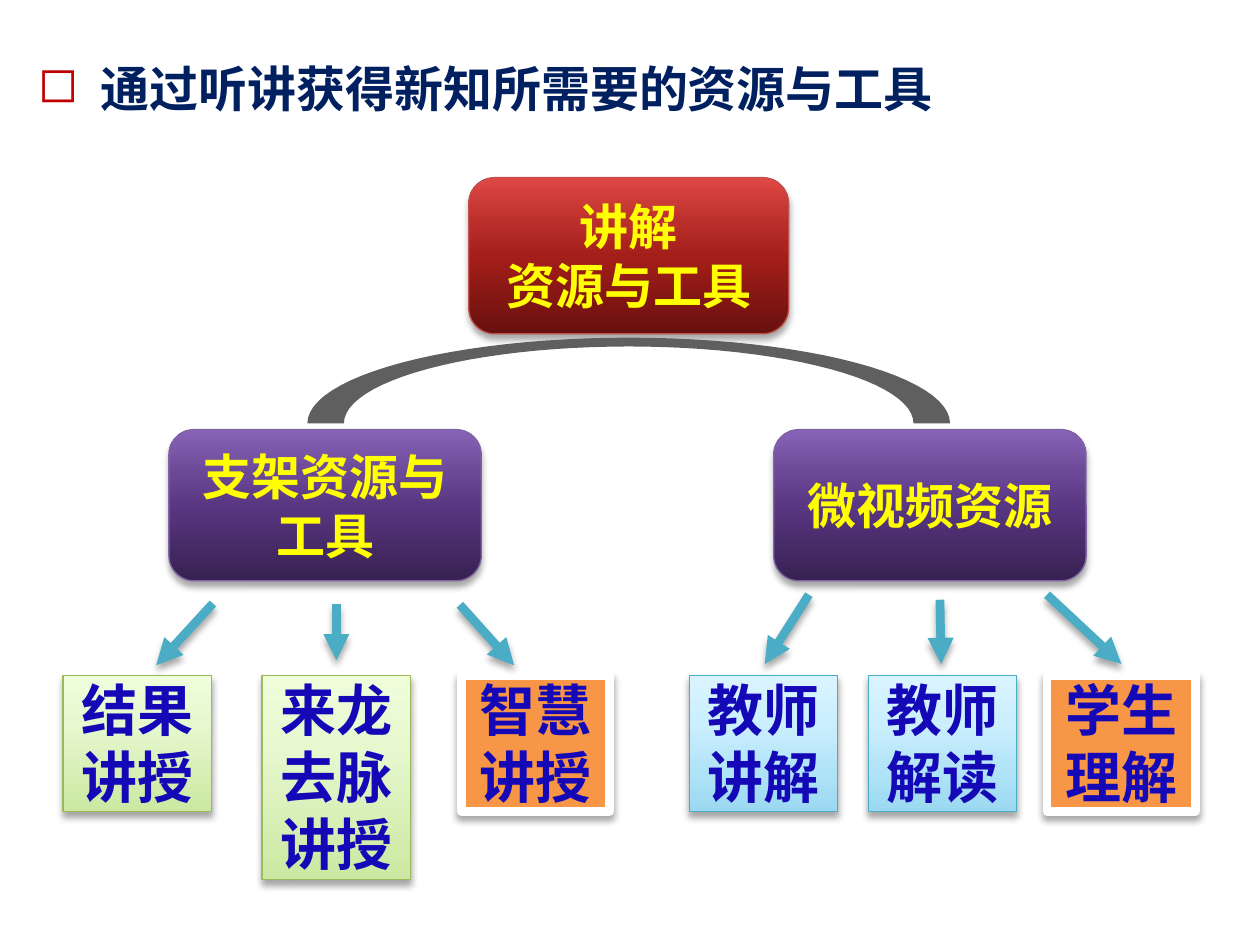
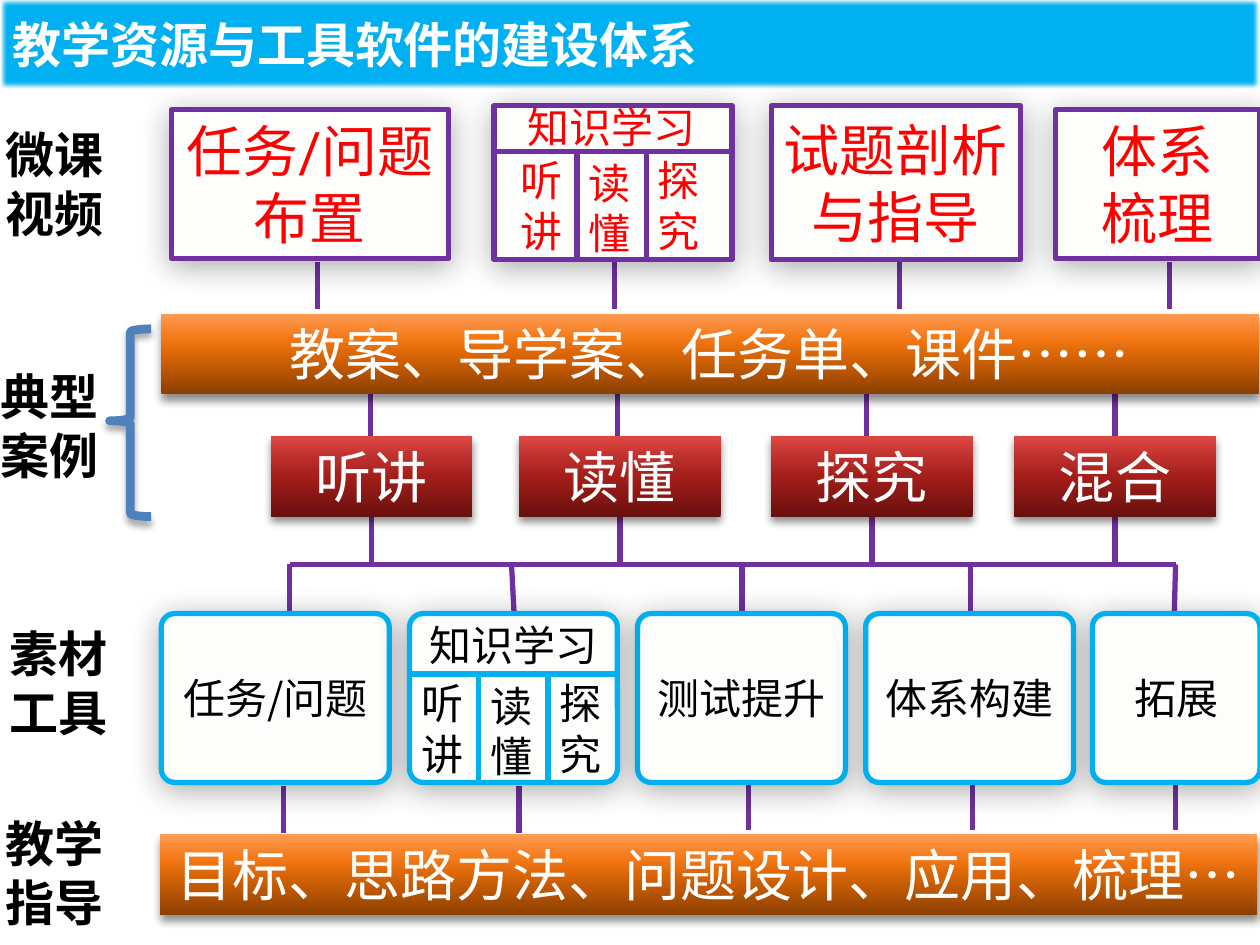
import math

import pptx
import pptx.dml.color
import pptx.enum.dml
import pptx.enum.shapes
import pptx.enum.text
import pptx.oxml
import pptx.oxml.ns
import pptx.util
from lxml import etree

COLUMNS, ROWS = 100, 75
SHAPES = pptx.enum.shapes.MSO_SHAPE
CENTER, LEFT = pptx.enum.text.PP_ALIGN.CENTER, pptx.enum.text.PP_ALIGN.LEFT
TOP, MIDDLE = pptx.enum.text.MSO_ANCHOR.TOP, pptx.enum.text.MSO_ANCHOR.MIDDLE

CJK, LATIN = "Noto Sans CJK SC", "Roboto"
WHITE, BLACK, PAPER = "FFFFFF", "000000", "FDFDFC"
PURPLE, SKY, TEAL, YELLOW, RED = "7030A0", "00B0F0", "4BACC6", "FFFF00", "FF0000"
INK, ORANGE, GREY = "1509B7", "F79646", "5F5F5F"

# Gradients run from the bottom edge up: (percent, colour)
CRIMSON = [(0, "68100E"), (50, "A41E1A"), (70, "B92E2A"), (100, "DF4845")]
VIOLET = [(0, "372152"), (50, "593782"), (70, "6A4895"), (100, "8763B7")]
AMBER = [(0, "8B3F00"), (50, "DA6606"), (70, "F47917"), (100, "FF9C54")]
ICE = [(0, "9BD9F1"), (65, "CBEFFE"), (100, "DAF4FF")]
LIME = [(0, "CCE8A2"), (65, "E7F8CF"), (100, "EFFDDB")]

# Shadows: opacity percent, blur points, distance points, direction degrees
SMALL, BAR, WIDE = (35, 4, 3, 90), (45, 5, 3, 90), (33, 17.8, 3, 87)


def rgb(value):
    return pptx.dml.color.RGBColor.from_string(value)


def add_node(parent, tag, **attributes):
    node = etree.SubElement(parent, pptx.oxml.ns.qn(tag))
    for key, value in attributes.items():
        node.set(key, str(value))
    return node


class Deck:
    """Holds the presentation, its style and the slide being built."""

    def __init__(self):
        self.presentation = pptx.Presentation()
        self.presentation.slide_width = pptx.util.Inches(10)
        self.presentation.slide_height = pptx.util.Inches(7.5)
        self.slide = None

    def x(self, columns):
        return round(self.presentation.slide_width * columns / COLUMNS)

    def y(self, rows):
        return round(self.presentation.slide_height * rows / ROWS)

    def place(self, area):
        left, top, width, height = area
        return self.x(left), self.y(top), self.x(width), self.y(height)

    def title(self, text, area, color, anchor=MIDDLE):
        """Start a title-only slide and return its formatted title."""
        layout = self.presentation.slide_layouts[5]
        self.slide = self.presentation.slides.add_slide(layout)
        heading = self.slide.shapes.title
        heading.left, heading.top, heading.width, heading.height = self.place(area)
        self.set_text(heading, text, 28, color, bold=True, align=LEFT, anchor=anchor)
        return heading

    def bullet(self, paragraph, mark, color):
        properties = paragraph._p.get_or_add_pPr()
        properties.set("marL", str(self.x(5)))
        properties.set("indent", str(-self.x(5)))
        add_node(add_node(properties, "a:buClr"), "a:srgbClr", val=color)
        add_node(properties, "a:buChar", char=mark)

    def set_text(self, holder, text, size, color, bold=False, font=CJK,
                 align=CENTER, anchor=MIDDLE, inset=None):
        frame = holder.text_frame
        frame.text = text
        frame.word_wrap = True
        frame.auto_size = pptx.enum.text.MSO_AUTO_SIZE.NONE
        frame.vertical_anchor = anchor
        if inset is not None:
            frame.margin_left = frame.margin_right = inset
            frame.margin_top = frame.margin_bottom = inset
        for paragraph in frame.paragraphs:
            paragraph.alignment = align
            for run in paragraph.runs:
                run.font.size = pptx.util.Pt(size)
                run.font.bold = bold
                run.font.name = font
                run.font.color.rgb = rgb(color)
                add_node(run._r.get_or_add_rPr(), "a:ea", typeface=CJK)

    def paint(self, shape, fill, line, shadow):
        """Set fill (hex or gradient), line (hex, points) and shadow."""
        if fill is None:
            shape.fill.background()
        elif isinstance(fill, str):
            shape.fill.solid()
            shape.fill.fore_color.rgb = rgb(fill)
        else:
            shape.fill.gradient()
            shape.fill.gradient_angle = 90
            stops = shape.element.spPr.find(".//" + pptx.oxml.ns.qn("a:gsLst"))
            for stop in list(stops):
                stops.remove(stop)
            for percent, color in fill:
                stop = add_node(stops, "a:gs", pos=percent * 1000)
                add_node(stop, "a:srgbClr", val=color)
        if line is None:
            shape.line.fill.background()
        else:
            shape.line.color.rgb = rgb(line[0])
            shape.line.width = pptx.util.Pt(line[1])
        self.cast(shape, shadow)

    def cast(self, shape, shadow):
        effects = add_node(shape.element.spPr, "a:effectLst")
        if shadow:
            opacity, blur, distance, direction = shadow
            outer = add_node(effects, "a:outerShdw", blurRad=pptx.util.Pt(blur),
                             dist=pptx.util.Pt(distance), dir=direction * 60000,
                             rotWithShape=0)
            color = add_node(outer, "a:srgbClr", val=BLACK)
            add_node(color, "a:alpha", val=opacity * 1000)
        return effects

    def box(self, area, fill, line=None, shadow=None, kind=SHAPES.RECTANGLE,
            adjust=(), text=None, **style):
        shape = self.slide.shapes.add_shape(kind, *self.place(area))
        for index, value in enumerate(adjust):
            shape.adjustments[index] = value
        self.paint(shape, fill, line, shadow)
        if text:
            self.set_text(shape, text, **style)

    def label(self, area, text, size, color, bold=False):
        holder = self.slide.shapes.add_textbox(*self.place(area))
        self.set_text(holder, text, size, color, bold, anchor=TOP)

    def line(self, x1, y1, x2, y2, color=PURPLE, width=3, arrow=False, shadow=None):
        connector = self.slide.shapes.add_connector(
            pptx.enum.shapes.MSO_CONNECTOR.STRAIGHT,
            self.x(x1), self.y(y1), self.x(x2), self.y(y2))
        connector.line.color.rgb = rgb(color)
        connector.line.width = pptx.util.Pt(width)
        if arrow:
            add_node(connector.line._get_or_add_ln(), "a:tailEnd", type="triangle")
        self.cast(connector, shadow)

    def stems(self, columns, top, bottom):
        for column in columns:
            self.line(column, top, column, bottom)

    def arch(self, center, base, outer, inner, color):
        """Draw a half ring between two (width, height) radii."""
        steps = 48
        angles = [math.pi * step / steps for step in range(steps + 1)]
        rim = [(outer, angle) for angle in angles]
        rim += [(inner, angle) for angle in reversed(angles)]
        points = [(self.x(center - radii[0] * math.cos(angle)),
                   self.y(base - radii[1] * math.sin(angle)))
                  for radii, angle in rim]
        builder = self.slide.shapes.build_freeform(*points[0])
        builder.add_line_segments(points[1:], close=True)
        self.paint(builder.convert_to_shape(), color, None, None)

    def knowledge(self, area, kind, adjust, heading, rule, border, color):
        """Draw a box with a heading above three columns of learning modes."""
        left, top, width, height = area
        x, y = heading
        self.box(area, PAPER, (border, 3), WIDE, kind, adjust)
        self.line(left, rule, left + width, rule, border)
        for divider in (x + 5.5, x + 11):
            self.line(divider, rule, divider, top + height, border)
        self.label((x, y, 16.5, 5), "知识学习", 24, color)
        for index, mode in enumerate(("听讲", "读懂", "探究")):
            drop = 0 if index == 1 else -0.2
            self.label((x - 0.2 + 5.45 * index, rule + drop, 5.7, 9.1), mode, 24, color)


def build_listening(deck):
    heading = deck.title("通过听讲获得新知所需要的资源与工具", (2, 1.8, 83.1, 8.1),
                         "002060", anchor=TOP)
    paragraph = heading.text_frame.paragraphs[0]
    paragraph.line_spacing = 1.5
    deck.bullet(paragraph, "◻", "C00000")

    nodes = [((37.2, 14.1, 25.4, 12.4), CRIMSON, "C0504D", "讲解\n资源与工具"),
             ((13.4, 34.1, 24.8, 12), VIOLET, "8064A2", "支架资源与工具"),
             ((61.4, 34.1, 24.8, 12), VIOLET, "8064A2", "微视频资源")]
    for area, fill, border, text in nodes:
        deck.box(area, fill, (border, 0.75), SMALL, SHAPES.ROUNDED_RECTANGLE,
                 text=text, size=28, color=YELLOW, bold=True)
    deck.arch(49.9, 33.6, (25.5, 6.8), (22.6, 6.1), GREY)

    green, blue, accent = (LIME, "9BBB59", 0.75), (ICE, TEAL, 0.75), (ORANGE, WHITE, 5)
    leaves = [(5, 10.8, green, "结果讲授"), (20.8, 16.2, green, "来龙去脉讲授"),
              (36.6, 10.8, accent, "智慧讲授"), (54.7, 10.8, blue, "教师讲解"),
              (68.9, 10.8, blue, "教师解读"), (83.1, 10.8, accent, "学生理解")]
    for left, height, (fill, border, weight), text in leaves:
        deck.box((left, 53.6, 11.8, height), fill, (border, weight), SMALL, text=text,
                 size=32, color=INK, bold=True, anchor=TOP, inset=0)

    for ends in [(16.9, 47.9, 12.4, 52.8), (26.7, 47.9, 26.7, 52.4),
                 (36.5, 48, 40.8, 52.8), (64.2, 47.2, 60.7, 52.7),
                 (74.6, 47.6, 74.7, 52.7), (83.1, 47.2, 89, 52.7)]:
        deck.line(*ends, color=TEAL, width=5, arrow=True, shadow=SMALL)


def build_system(deck):
    banner = deck.title("教学资源与工具软件的建设体系", (0, -0.1, 99.9, 7.1), WHITE)
    deck.paint(banner, SKY, ("EEECE1", 0.75), None)
    effects = banner.element.spPr.find(pptx.oxml.ns.qn("a:effectLst"))
    add_node(effects, "a:softEdge", rad=pptx.util.Pt(2.5))

    deck.stems((29.4, 49, 68.8, 88.5), 30.9, 34.7)
    deck.stems((25.2, 48.8, 71.4, 92.8), 20.8, 24.5)
    deck.stems((29.5, 49.2, 69.2, 88.5), 41, 44.7)
    deck.stems((22.5, 41.2), 62.4, 66.1)
    deck.stems((59.4, 77.2, 93.3), 62.1, 65.9)
    deck.line(23, 44.8, 93.3, 44.8)
    for start, end in ((23, 23), (40.6, 40.8), (58.9, 58.9), (77, 77), (93.3, 93.2)):
        deck.line(start, 44.8, end, 48.7)

    for area, text in [((13.6, 8.7, 22, 11.8), "任务/问题布置"),
                       ((61.2, 8.4, 19.8, 12.2), "试题剖析与指导"),
                       ((83.8, 8.7, 16.2, 11.8), "体系\n梳理")]:
        deck.box(area, PAPER, (PURPLE, 3), WIDE, text=text, size=32, color=RED, font=LATIN)
    deck.knowledge((39.2, 8.4, 18.9, 12.2), SHAPES.RECTANGLE, (),
                   (40.3, 7.6), 12, PURPLE, RED)

    for left, top, text in [(12.8, 24.9, "教案、导学案、任务单、课件……"),
                            (12.7, 66.2, "目标、思路方法、问题设计、应用、梳理…")]:
        deck.box((left, top, 87.1, 6.4), AMBER, None, BAR, text=text,
                 size=32, color=WHITE, font=LATIN, anchor=TOP)
    for left, mode in ((21.5, "听讲"), (41.2, "读懂"), (61.2, "探究"), (80.5, "混合")):
        deck.box((left, 34.6, 16, 6.4), CRIMSON, None, BAR, text=mode,
                 size=32, color=WHITE, anchor=TOP)

    rounded = (0.08,)
    for left, width, text in [(12.8, 18.1, "任务/问题"), (50.6, 16.5, "测试提升"),
                              (68.7, 16.5, "体系构建"), (86.7, 13.3, "拓展")]:
        deck.box((left, 48.7, width, 13.4), PAPER, (SKY, 3), WIDE,
                 SHAPES.ROUNDED_RECTANGLE, rounded, text=text, size=24, color=BLACK)
    deck.knowledge((32.5, 48.7, 16.5, 13.4), SHAPES.ROUNDED_RECTANGLE, rounded,
                   (32.5, 48.7), 53.5, SKY, BLACK)

    for left, top, text in [(-3.9, 9.4, "微课\n视频"), (-4.3, 28.6, "典型\n案例"),
                            (-3.6, 49, "素材\n工具"), (-3.9, 64.1, "教学\n指导")]:
        deck.label((left, top, 16.5, 10.4), text, 28, BLACK, bold=True)
    deck.box((8.7, 26.1, 3.3, 14.9), None, ("4F81BD", 5), SMALL,
             SHAPES.LEFT_BRACE, (0.08, 0.49))


def main():
    deck = Deck()
    build_listening(deck)
    build_system(deck)
    deck.presentation.save("out.pptx")


if __name__ == "__main__":
    main()
